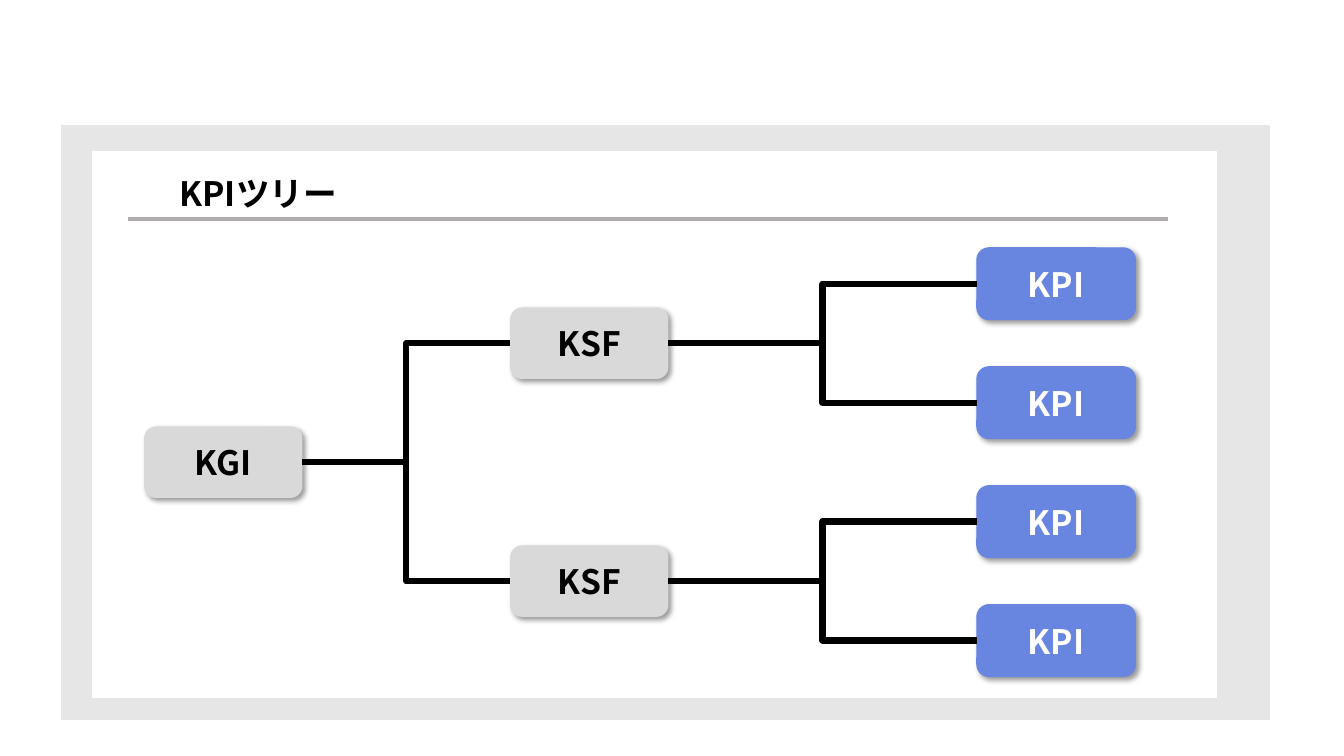
from lxml import etree
from pptx import Presentation
from pptx.dml.color import RGBColor
from pptx.enum.shapes import MSO_CONNECTOR, MSO_SHAPE
from pptx.enum.text import MSO_ANCHOR, MSO_AUTO_SIZE, PP_ALIGN
from pptx.oxml.ns import qn
from pptx.util import Inches, Pt

RECTANGLE, ROUNDED = MSO_SHAPE.RECTANGLE, MSO_SHAPE.ROUNDED_RECTANGLE
ELBOW, STRAIGHT = MSO_CONNECTOR.ELBOW, MSO_CONNECTOR.STRAIGHT
LEFT_SITE, RIGHT_SITE = 1, 3

BLACK = RGBColor(0x00, 0x00, 0x00)
WHITE = RGBColor(0xFF, 0xFF, 0xFF)
FRAME_GRAY = RGBColor(0xE6, 0xE6, 0xE6)
NODE_GRAY = RGBColor(0xD9, 0xD9, 0xD9)
RULE_GRAY = RGBColor(0xAF, 0xAB, 0xAB)
BLUE = RGBColor(0x68, 0x85, 0xDF)
FONT = "Noto Sans CJK JP"

# Content: each node is (label, children)
TITLE = "KPIツリー"
TREE = ("KGI", [
    ("KSF", [("KPI", []), ("KPI", [])]),
    ("KSF", [("KPI", []), ("KPI", [])]),
])

# Layout in inches
PANELS = [(0.61, 1.25, 11.98, 5.89, FRAME_GRAY), (0.92, 1.5, 11.14, 5.42, WHITE)]
LEVEL_LEFTS = [1.43, 5.06, 9.69]
LEVEL_STYLES = [(NODE_GRAY, BLACK), (NODE_GRAY, BLACK), (BLUE, WHITE)]
NODE_WIDTH, NODE_HEIGHT = 1.57, 0.71
FIRST_LEAF_TOP, LEAF_PITCH = 2.46, 1.18

presentation = Presentation()
presentation.slide_width = Inches(13.33)
presentation.slide_height = Inches(7.5)
slide = presentation.slides.add_slide(presentation.slide_layouts[5])
shapes = slide.shapes


def write(shape, text, color, alignment):
    frame = shape.text_frame
    frame.text = text
    frame.word_wrap = True
    frame.auto_size = MSO_AUTO_SIZE.NONE
    frame.vertical_anchor = MSO_ANCHOR.MIDDLE
    paragraph = frame.paragraphs[0]
    paragraph.alignment = alignment
    font = paragraph.runs[0].font
    font.name, font.size, font.bold = FONT, Pt(24), True
    font.color.rgb = color
    latin = font._element.find(qn("a:latin"))
    east_asian = etree.Element(qn("a:ea"), typeface=FONT)
    latin.addnext(east_asian)


def add_box(preset, left, top, width, height, fill):
    shape = shapes.add_shape(preset, Inches(left), Inches(top), Inches(width), Inches(height))
    shape.shadow.inherit = False
    shape.fill.solid()
    shape.fill.fore_color.rgb = fill
    shape.line.color.rgb = fill
    shape.line.width = Pt(1)
    return shape


def add_shadow(shape):
    effects = shape._element.spPr.find(qn("a:effectLst"))
    shadow = etree.SubElement(effects, qn("a:outerShdw"), blurRad=str(Pt(4)), dist=str(Pt(3)),
                              dir="2700000", algn="tl", rotWithShape="0")
    color = etree.SubElement(shadow, qn("a:srgbClr"), val=str(BLACK))
    etree.SubElement(color, qn("a:alpha"), val="40000")


def add_line(kind, start, end, color, width):
    line = shapes.add_connector(kind, *(Inches(value) for value in start + end))
    line.line.color.rgb = color
    line.line.width = Pt(width)
    etree.SubElement(line._element.spPr, qn("a:effectLst"))
    return line


def place(node, level, leaf_tops):
    """Return (label, level, top, children), with each parent midway between its children."""
    label, children = node
    placed = [place(child, level + 1, leaf_tops) for child in children]
    top = (placed[0][2] + placed[-1][2]) / 2 if placed else next(leaf_tops)
    return label, level, top, placed


def draw(node):
    label, level, top, children = node
    fill, text_color = LEVEL_STYLES[level]
    left = LEVEL_LEFTS[level]
    box = add_box(ROUNDED, left, top, NODE_WIDTH, NODE_HEIGHT, fill)
    if children:
        box.line.fill.background()
    add_shadow(box)
    write(box, label, text_color, PP_ALIGN.CENTER)
    for child in children:
        child_box = draw(child)
        start = (left + NODE_WIDTH, top + NODE_HEIGHT / 2)
        end = (LEVEL_LEFTS[level + 1], child[2] + NODE_HEIGHT / 2)
        branch = add_line(ELBOW, start, end, BLACK, 4.5)
        branch.begin_connect(box, RIGHT_SITE)
        branch.end_connect(child_box, LEFT_SITE)
    return box


# Panels
for panel in PANELS:
    add_box(RECTANGLE, *panel)

# Title, raised above the panels, and its rule
title = shapes.title
title.left, title.top, title.width, title.height = (
    Inches(value) for value in (1.68, 1.67, 3.37, 0.5))
write(title, TITLE, BLACK, PP_ALIGN.LEFT)
shapes._spTree.append(title._element)
add_line(STRAIGHT, (1.27, 2.17), (11.58, 2.17), RULE_GRAY, 3)

# Tree
leaf_tops = (FIRST_LEAF_TOP + LEAF_PITCH * index for index in range(4))
draw(place(TREE, 0, leaf_tops))

presentation.save("out.pptx")
